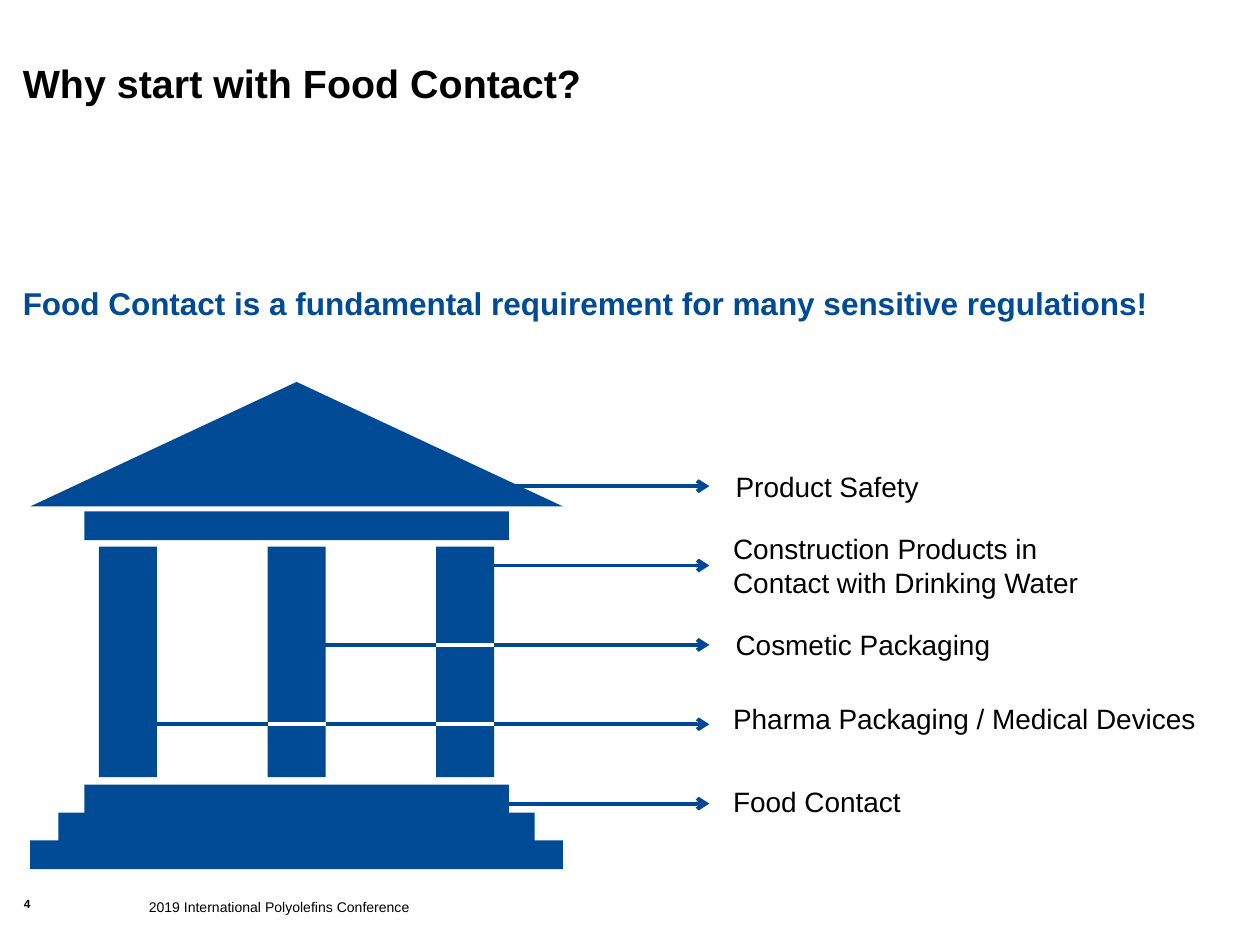
from lxml import etree
from pptx import Presentation
from pptx.dml.color import RGBColor
from pptx.enum import shapes, text
from pptx.oxml.ns import qn
from pptx.util import Cm, Pt

COLORS = {"blue": "004A96", "arrow": "004893", "black": "000000", "white": "FFFFFF"}

# text, (left, top, width, height) in cm, font, line spacing
TEXTS = [
    ("Why start with Food Contact?", (0.46, 1.19, 24.46, 2.36),
     {"size": 22.5, "bold": True}, 1.0),
    ("Food Contact is a fundamental requirement for many sensitive regulations!",
     (0.46, 5.64, 22.99, 0.79), {"size": 18, "bold": True, "color": "blue"}, 1.1),
    ("4", (0.48, 18.08, 0.81, 0.43), {"size": 6.8, "bold": True}, 1.0),
    ("2019 International Polyolefins Conference", (3.0, 18.11, 7.01, 0.46),
     {"size": 8}, 1.0),
]
# label, label left, label top, where the arrow starts on the temple
REGULATIONS = [
    ("Product Safety", 14.83, 9.47, 9.09),
    ("Construction Products in \vContact with Drinking Water", 14.78, 10.72, 9.4),
    ("Cosmetic Packaging", 14.83, 12.65, 6.07),
    ("Pharma Packaging / Medical Devices", 14.78, 14.15, 2.49),
    ("Food Contact", 14.78, 15.82, 2.49),
]
LABEL_W, LINE_H = 10.24, 0.69
ARROW_TIP, ARROW_TOP, ARROW_PITCH = 14.3, 9.8, 1.6

# Temple: every part is centred on one axis
AXIS = 5.98
SLAB_H = 0.58
SLABS = [(10.74, 16.94), (9.6, 16.38), (8.56, 15.82), (8.56, 10.31)]  # width, top
ROOF_W, ROOF_TOP, ROOF_H = 10.74, 7.7, 2.51
COLUMN_W, COLUMN_TOP, COLUMN_H, COLUMN_PITCH = 1.17, 11.02, 4.65, 3.4
CROSSINGS = [(2, 2), (3, 2), (3, 1)]  # arrow index, column index

prs = Presentation()
prs.slide_width, prs.slide_height = Cm(25.4), Cm(19.05)
s = prs.slides.add_slide(prs.slide_layouts[6])


def rgb(name):
    return RGBColor.from_string(COLORS[name])


def add_text(words, box, font, spacing=1.0):
    tf = s.shapes.add_textbox(*map(Cm, box)).text_frame
    frame = {"word_wrap": True, "vertical_anchor": text.MSO_ANCHOR.TOP,
             "margin_left": 0, "margin_top": 0, "margin_right": 0, "margin_bottom": 0}
    for name, value in frame.items():
        setattr(tf, name, value)
    p = tf.paragraphs[0]
    p.text = words
    p.line_spacing = spacing
    style = {"name": "Arial", "size": Pt(font["size"]), "bold": font.get("bold", False)}
    for r in p.runs:
        for name, value in style.items():
            setattr(r.font, name, value)
        r.font.color.rgb = rgb(font.get("color", "black"))


def add_block(kind, width, top, height, center=AXIS):
    sp = s.shapes.add_shape(kind, Cm(center - width / 2), Cm(top), Cm(width), Cm(height))
    sp.shadow.inherit = False
    sp.fill.solid()
    sp.fill.fore_color.rgb = rgb("blue")
    sp.line.fill.background()


def add_line(x1, x2, y, color, arrow=False):
    """Horizontal line; the arrowhead, if any, sits at x2."""
    cx = s.shapes.add_connector(shapes.MSO_CONNECTOR.STRAIGHT, Cm(x1), Cm(y), Cm(x2), Cm(y))
    cx.line.color.rgb = rgb(color)
    cx.line.width = Pt(2.25)
    if arrow:
        etree.SubElement(cx.line._get_or_add_ln(), qn("a:tailEnd"), type="arrow")
    etree.SubElement(cx._element.spPr, qn("a:effectLst"))


def arrow_y(i):
    return ARROW_TOP + i * ARROW_PITCH


def column_center(i):
    return AXIS + (i - 1) * COLUMN_PITCH


for item in TEXTS:
    add_text(*item)

for i, (label, left, top, start) in enumerate(REGULATIONS):
    height = LINE_H * (1 + label.count("\v"))
    add_text(label, (left, top, LABEL_W, height), {"size": 16})
    add_line(start, ARROW_TIP, arrow_y(i), "arrow", arrow=True)

for width, top in SLABS:
    add_block(shapes.MSO_SHAPE.RECTANGLE, width, top, SLAB_H)
for i in range(3):
    add_block(shapes.MSO_SHAPE.RECTANGLE, COLUMN_W, COLUMN_TOP, COLUMN_H, column_center(i))
add_block(shapes.MSO_SHAPE.ISOSCELES_TRIANGLE, ROOF_W, ROOF_TOP, ROOF_H)

for arrow, column in CROSSINGS:
    x = column_center(column)
    add_line(x - COLUMN_W / 2, x + COLUMN_W / 2, arrow_y(arrow), "white")

prs.save("out.pptx")
